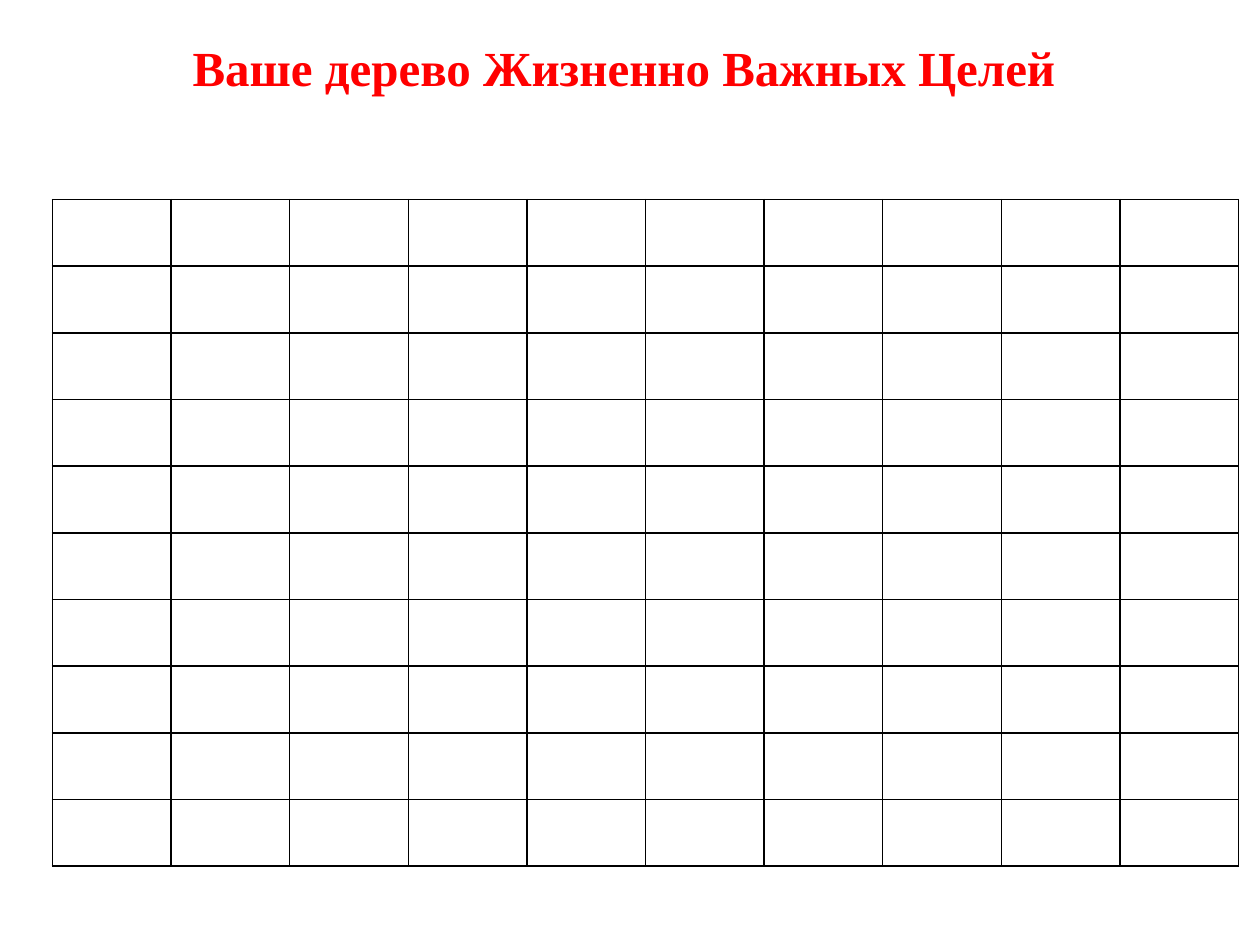
from lxml import etree
from pptx import Presentation
from pptx.dml.color import RGBColor
from pptx.enum.text import MSO_AUTO_SIZE, PP_ALIGN
from pptx.oxml.ns import qn
from pptx.util import Pt

CENTER = PP_ALIGN.CENTER
GROW = MSO_AUTO_SIZE.SHAPE_TO_FIT_TEXT
BLANK_LAYOUT = 6

RED = "FF0000"
BLACK = "000000"
TITLE_FORMAT = {"name": "Times New Roman", "size": Pt(28), "bold": True}
ROWS, COLUMNS = 10, 10
COLUMN_WIDTH, ROW_HEIGHT = 67.8, 38.1


def color(value):
    return RGBColor.from_string(value)


def add_title(slide, text, left, top, width, height):
    shape = slide.shapes.add_textbox(Pt(left), Pt(top), Pt(width), Pt(height))
    shape.text_frame.word_wrap = True
    shape.text_frame.auto_size = GROW
    paragraph = shape.text_frame.paragraphs[0]
    paragraph.alignment = CENTER
    run = paragraph.add_run()
    run.text = text
    for name, value in TITLE_FORMAT.items():
        setattr(run.font, name, value)
    run.font.color.rgb = color(RED)


def set_borders(cell, line_color, width):
    properties = cell._tc.get_or_add_tcPr()
    # Border lines come before the fill in the cell properties
    for index, side in enumerate(("lnL", "lnR", "lnT", "lnB")):
        line = etree.Element(qn(f"a:{side}"), w=str(Pt(width)))
        fill = etree.SubElement(line, qn("a:solidFill"))
        etree.SubElement(fill, qn("a:srgbClr"), val=str(color(line_color)))
        properties.insert(index, line)


def add_empty_grid(slide, left, top):
    frame = slide.shapes.add_table(
        ROWS, COLUMNS, Pt(left), Pt(top),
        Pt(COLUMNS * COLUMN_WIDTH), Pt(ROWS * ROW_HEIGHT))
    table = frame.table
    table.first_row = False
    table.horz_banding = False
    for column in table.columns:
        column.width = Pt(COLUMN_WIDTH)
    for row in table.rows:
        row.height = Pt(ROW_HEIGHT)
    for cell in table.iter_cells():
        cell.fill.background()
        set_borders(cell, BLACK, 1)


def main():
    presentation = Presentation()
    presentation.slide_width = Pt(720)
    presentation.slide_height = Pt(540)
    slide = presentation.slides.add_slide(
        presentation.slide_layouts[BLANK_LAYOUT])

    # Heading
    add_title(slide, "Ваше дерево Жизненно Важных Целей ", 96, 18, 528, 41)

    # Blank grid for the goals
    add_empty_grid(slide, 30, 114)

    presentation.save("out.pptx")


if __name__ == "__main__":
    main()
